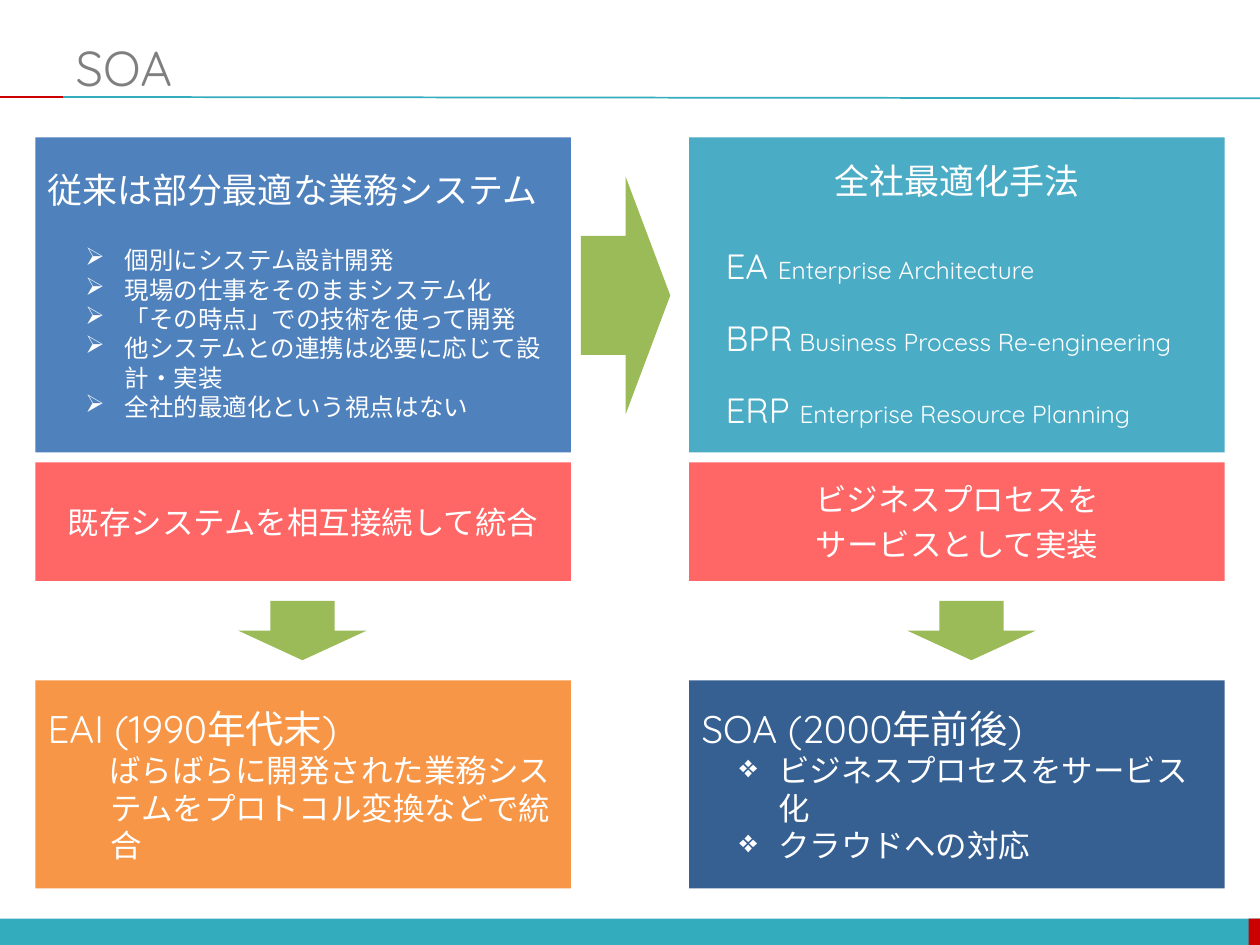
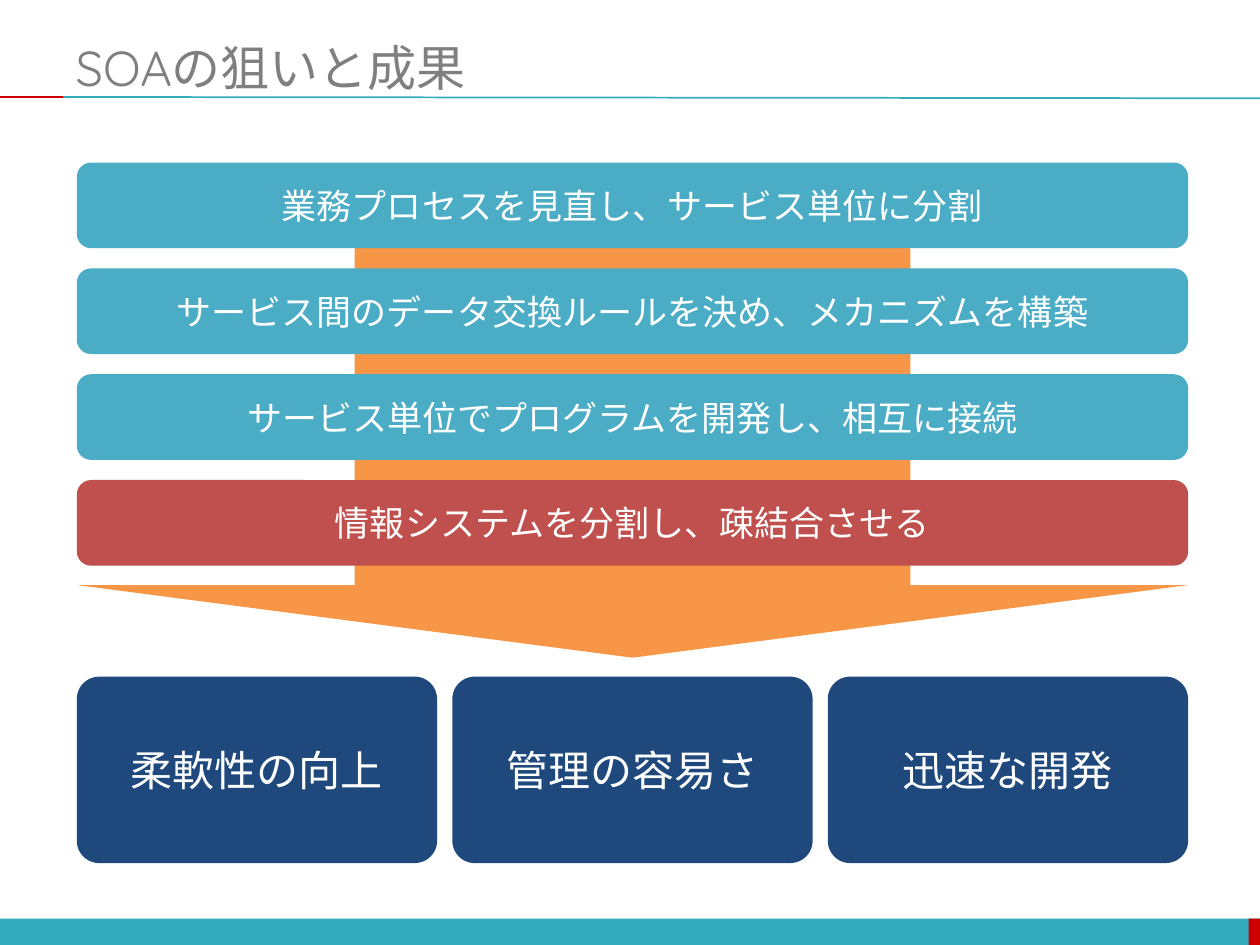
from dataclasses import dataclass

from lxml import etree
from pptx import Presentation
from pptx import util as u
from pptx.dml.color import RGBColor
from pptx.enum import shapes, text
from pptx.oxml import ns

TEAL = RGBColor(0x33, 0xAC, 0xBD)
RED = RGBColor(0xCC, 0x00, 0x00)
GREY = RGBColor(0x7F, 0x7F, 0x7F)
WHITE = RGBColor(0xFF, 0xFF, 0xFF)
BLUE = RGBColor(0x4F, 0x81, 0xBD)
AQUA = RGBColor(0x4B, 0xAC, 0xC6)
STEEL = RGBColor(0x37, 0x60, 0x92)
NAVY = RGBColor(0x1F, 0x49, 0x7D)
PINK = RGBColor(0xFF, 0x66, 0x66)
BRICK = RGBColor(0xC0, 0x50, 0x4D)
ORANGE = RGBColor(0xF7, 0x96, 0x46)
GREEN = RGBColor(0x9B, 0xBB, 0x59)

FONT = "Quicksand"
COLS, ROWS = 100, 75
KIND = shapes.MSO_SHAPE
ALIGN = text.PP_ALIGN


@dataclass
class Line:
    """One paragraph: its runs as (text, size) pairs; indents in columns, gap in points."""
    runs: list
    left: float = 0
    hang: float = 0
    mark: str = ""
    gap: float = 0
    align: ALIGN = ALIGN.LEFT


def mid(words, size, gap=0):
    """Return a centred line."""
    return Line([(words, size)], gap=gap, align=ALIGN.CENTER)


def item(words, size, mark, gap=0):
    """Return a bulleted line."""
    return Line([(words, size)], 6.1, -3.1, mark, gap)


class Deck:
    def __init__(self):
        self.prs = Presentation()
        self.prs.slide_width = u.Inches(10)
        self.prs.slide_height = u.Inches(7.5)
        self.slide = None

    def col(self, n):
        return int(self.prs.slide_width * n / COLS)

    def row(self, n):
        return int(self.prs.slide_height * n / ROWS)

    def place(self, x, y, w, h):
        return self.col(x), self.row(y), self.col(w), self.row(h)

    def page(self, title):
        """Start a slide with its title, rule and foot band."""
        self.slide = self.prs.slides.add_slide(self.prs.slide_layouts[5])
        self.form(KIND.RECTANGLE, (0, 72.9, 100, 2.2), TEAL)
        self.form(KIND.RECTANGLE, (99.1, 72.9, 1, 2.2), RED)
        self.rule((5, 7.7), (100, 7.8), TEAL)
        self.rule((0, 7.7), (5, 7.7), RED)
        head = self.slide.shapes.title
        head.left, head.top, head.width, head.height = self.place(5, 3, 95, 4.6)
        self.fill_text(head, [Line([(title, 28)])], GREY)

    def rule(self, start, end, color):
        line = self.slide.shapes.add_connector(
            shapes.MSO_CONNECTOR.STRAIGHT,
            self.col(start[0]), self.row(start[1]),
            self.col(end[0]), self.row(end[1]))
        line.line.color.rgb = color
        line.line.width = u.Pt(1)
        etree.SubElement(line._element.spPr, ns.qn("a:effectLst"))

    def form(self, kind, box, fill, adj=()):
        shape = self.slide.shapes.add_shape(kind, *self.place(*box))
        shape.shadow.inherit = False
        shape.fill.solid()
        shape.fill.fore_color.rgb = fill
        shape.line.fill.background()
        for i, value in enumerate(adj):
            shape.adjustments[i] = value
        return shape

    def panel(self, box, fill, lines, adj=()):
        """Draw a rounded box with text in it."""
        self.fill_text(self.form(KIND.ROUNDED_RECTANGLE, box, fill, adj), lines)

    def fill_text(self, shape, lines, color=WHITE):
        frame = shape.text_frame
        frame.word_wrap = True
        frame.auto_size = text.MSO_AUTO_SIZE.NONE
        frame.vertical_anchor = text.MSO_ANCHOR.MIDDLE
        for i, line in enumerate(lines):
            para = frame.add_paragraph() if i else frame.paragraphs[0]
            para.alignment = line.align
            if line.gap:
                para.space_before = u.Pt(line.gap)
            if line.left:
                self.indent(para, line)
            for words, size in line.runs:
                run = para.add_run()
                run.text = words
                run.font.name = FONT
                run.font.size = u.Pt(size)
                run.font.color.rgb = color

    def indent(self, para, line):
        para.level = 1
        props = para._p.get_or_add_pPr()
        props.set("marL", str(self.col(line.left)))
        props.set("indent", str(self.col(line.hang)))
        if line.mark:
            etree.SubElement(props, ns.qn("a:buChar")).set("char", line.mark)


def draw_shift(deck):
    """From separate systems to company-wide methods."""
    deck.page("SOA")
    left, right, wide = 2.8, 54.7, 42.5
    habits = ["個別にシステム設計開発", "現場の仕事をそのままシステム化",
              "「その時点」での技術を使って開発",
              "他システムとの連携は必要に応じて設計・実装",
              "全社的最適化という視点はない"]
    terms = [("EA ", "Enterprise Architecture", 25),
             ("BPR", " Business Process Re-engineering", 17),
             ("ERP ", "Enterprise Resource Planning", 17)]
    past = [Line([("従来は部分最適な業務システム", 20)])]
    past += [item(habit, 14, "➢", 0 if i else 20) for i, habit in enumerate(habits)]
    whole = [mid("全社最適化手法", 20)]
    whole += [Line([(short, 20), (full, 14)], 4, -2.1, gap=gap)
              for short, full, gap in terms]
    link = [mid("既存システムを相互接続して統合", 18)]
    serve = [mid("ビジネスプロセスを", 18), mid("サービスとして実装", 18, 4)]
    eai = [Line([("EAI (1990年代末)", 22)]),
           Line([("ばらばらに開発された業務システムをプロトコル変換などで統合", 18)],
                5, -0.1)]
    soa = [Line([("SOA (2000年前後)", 22)]),
           item("ビジネスプロセスをサービス化", 18, "❖"),
           item("クラウドへの対応", 18, "❖")]
    bands = [(10.9, 25, (BLUE, past), (AQUA, whole)),
             (36.7, 9.4, (PINK, link), (PINK, serve)),
             (54, 16.5, (ORANGE, eai), (STEEL, soa))]
    for top, high, *pair in bands:
        for x, (fill, lines) in zip((left, right), pair):
            deck.panel((x, top, wide, high), fill, lines, [0])
    deck.form(KIND.RIGHT_ARROW, (46.1, 14, 7.1, 18.9), GREEN)
    for x in (18.9, 72):
        deck.form(KIND.DOWN_ARROW, (x, 47.7, 10.2, 4.7), GREEN)


def draw_goals(deck):
    """Steps that lead down to three results."""
    deck.page("SOAの狙いと成果")
    left, wide = 6.1, 88.2
    steps = [("業務プロセスを見直し、サービス単位に分割", AQUA),
             ("サービス間のデータ交換ルールを決め、メカニズムを構築", AQUA),
             ("サービス単位でプログラムを開発し、相互に接続", AQUA),
             ("情報システムを分割し、疎結合させる", BRICK)]
    gains = ["柔軟性の向上", "管理の容易さ", "迅速な開発"]
    deck.form(KIND.DOWN_ARROW, (left, 16.2, wide, 36), ORANGE, [0.5, 0.16])
    for i, (step, fill) in enumerate(steps):
        deck.panel((left, 12.9 + 8.4 * i, wide, 6.8), fill, [mid(step, 20)])
    gap = 1.2
    card = (wide - gap * (len(gains) - 1)) / len(gains)
    for i, gain in enumerate(gains):
        deck.panel((left + i * (card + gap), 53.7, card, 14.8), NAVY,
                   [mid(gain, 24)], [0.12])


def main():
    deck = Deck()
    draw_shift(deck)
    draw_goals(deck)
    deck.prs.save("out.pptx")


if __name__ == "__main__":
    main()
